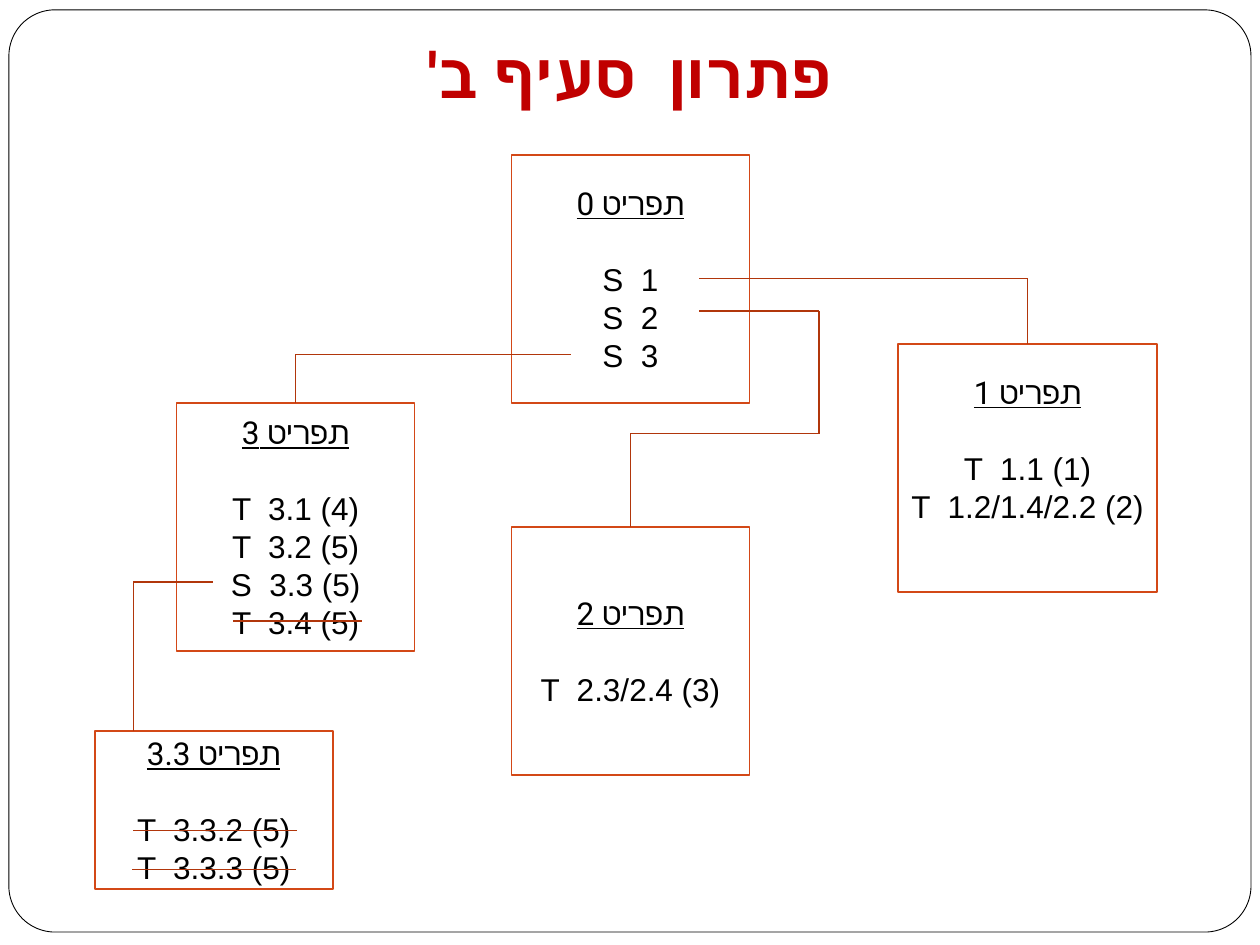
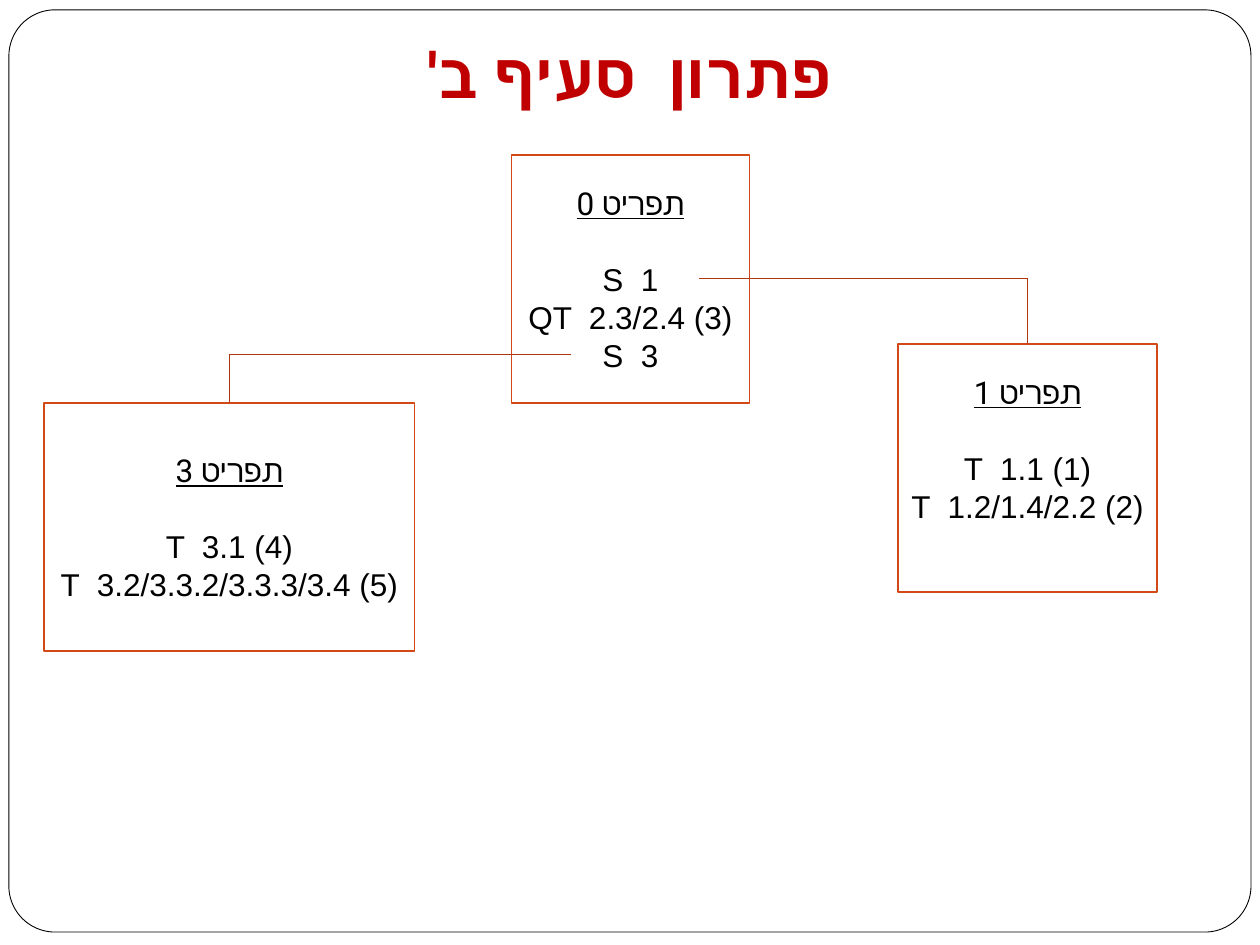
from lxml import etree
from pptx import Presentation
from pptx.dml.color import RGBColor
from pptx.enum.shapes import MSO_CONNECTOR, MSO_SHAPE
from pptx.enum.text import MSO_ANCHOR, PP_ALIGN
from pptx.oxml.ns import qn
from pptx.util import Cm, Pt

RECTANGLE = MSO_SHAPE.RECTANGLE
ROUNDED = MSO_SHAPE.ROUNDED_RECTANGLE
STRAIGHT = MSO_CONNECTOR.STRAIGHT
CENTER = PP_ALIGN.CENTER
MIDDLE = MSO_ANCHOR.MIDDLE
BOTTOM = MSO_ANCHOR.BOTTOM
TOP_SIDE = 0

COLORS = {
    "paper": "FFFFFF",
    "ink": "000000",
    "title": "C00000",
    "box": "D34817",
    "link": "B1360B",
}
LATIN_FONT = "Arial"
HEBREW_FONT = "Roboto"
LINE_PITCH = Pt(21.7)
MENU_WIDTH, MENU_HEIGHT = 4.8, 5.0


def color(name):
    return RGBColor.from_string(COLORS[name])


class MenuDeck:
    """Holds the deck, its style and the slide being drawn."""

    def __init__(self):
        self.deck = Presentation()
        self.deck.slide_width, self.deck.slide_height = Cm(25.4), Cm(19.05)
        self.page = None

    def new_page(self, title):
        self.page = self.deck.slides.add_slide(self.deck.slide_layouts[6])
        frame = self.outlined(ROUNDED, 0.18, 0.2, 25.04, 18.59, "ink", 0.5)
        frame.adjustments[0] = 0.05
        self.title(title)

    def outlined(self, kind, left, top, width, height, line, weight):
        shape = self.page.shapes.add_shape(kind, Cm(left), Cm(top), Cm(width), Cm(height))
        shape.shadow.inherit = False
        shape.fill.solid()
        shape.fill.fore_color.rgb = color("paper")
        shape.line.color.rgb = color(line)
        shape.line.width = Pt(weight)
        return shape

    def style(self, para, size, latin, ink, bold=False, underline=False):
        """Centres a right-to-left paragraph and formats its run."""
        para.alignment = CENTER
        para._p.get_or_add_pPr().set("rtl", "1")
        span = para.runs[0]
        span.font.size = Pt(size)
        span.font.name = latin
        span.font.bold = bold
        span.font.underline = underline
        span.font.color.rgb = color(ink)
        script = etree.SubElement(span.font._element, qn("a:cs"))
        script.set("typeface", HEBREW_FONT)

    def title(self, text):
        box = self.page.shapes.add_textbox(Cm(1.27), Cm(-0.69), Cm(22.86), Cm(3.18))
        frame = box.text_frame
        frame.word_wrap = True
        frame.vertical_anchor = BOTTOM
        frame.margin_bottom = Cm(0.25)
        frame.text = text
        self.style(frame.paragraphs[0], 36, HEBREW_FONT, "title", bold=True)

    def menu(self, left, top, name, items, width=MENU_WIDTH, height=MENU_HEIGHT, lift=0):
        """Draws a menu box; lift is the space kept free below its items."""
        box = self.outlined(RECTANGLE, left, top, width, height, "box", 1)
        frame = box.text_frame
        frame.word_wrap = True
        frame.vertical_anchor = MIDDLE
        frame.margin_left = frame.margin_right = frame.margin_top = 0
        frame.margin_bottom = lift
        frame.text = "\n".join([name, *items])
        for index, para in enumerate(frame.paragraphs):
            self.style(para, 18, LATIN_FONT, "ink", underline=index == 0)
            para.line_spacing = LINE_PITCH
        frame.paragraphs[0].space_after = LINE_PITCH
        return box

    def line(self, start, end):
        connector = self.page.shapes.add_connector(STRAIGHT, *start, *end)
        connector.line.color.rgb = color("link")
        connector.line.width = Pt(0.75)
        etree.SubElement(connector._element.spPr, qn("a:effectLst"))
        return connector

    def route(self, *points, target=None):
        """Links points by straight lines, then drops to the top of target."""
        stops = [(Cm(x), Cm(y)) for x, y in points]
        if target is not None:
            middle = target.left + target.width // 2
            stops += [(middle, stops[-1][1]), (middle, target.top)]
        for start, end in zip(stops, stops[1:]):
            last = self.line(start, end)
        if target is not None:
            last.end_connect(target, TOP_SIDE)

    def shared_menus(self, second_item):
        """Draws menus 0 and 1 with the link between them."""
        self.menu(10.31, 3.12, "תפריט 0", ["S  1", second_item, "S  3"])
        menu_1 = self.menu(18.11, 6.93, "תפריט 1", ["T  1.1 (1)", "T  1.2/1.4/2.2 (2)"],
                           width=5.21, lift=LINE_PITCH)
        self.route((14.1, 5.61), target=menu_1)

    def menu_3(self, left, width, items):
        box = self.menu(left, 8.13, "תפריט 3", items, width=width)
        self.route((11.51, 7.14), target=box)


def main():
    title = "פתרון  סעיף ב'"
    menus = MenuDeck()

    menus.new_page(title)
    menus.shared_menus("S  2")
    menu_2 = menus.menu(10.31, 10.62, "תפריט 2", ["T  2.3/2.4 (3)"])
    menus.route((14.1, 6.27), (16.51, 6.27), (16.51, 8.74), target=menu_2)
    menus.menu_3(3.56, MENU_WIDTH, ["T  3.1 (4)", "T  3.2 (5)", "S  3.3 (5)", "T  3.4 (5)"])
    menus.menu(1.91, 14.73, "תפריט 3.3", ["T  3.3.2 (5)", "T  3.3.3 (5)"], height=3.2)
    menus.route((4.29, 11.73), (2.69, 11.73), (2.69, 14.73))
    for left, right, height in [(4.7, 7.29, 12.52), (2.69, 5.99, 16.74), (2.67, 5.97, 17.53)]:
        menus.route((left, height), (right, height))

    menus.new_page(title)
    menus.shared_menus("QT  2.3/2.4 (3)")
    menus.menu_3(0.89, 7.47, ["T  3.1 (4)", "T  3.2/3.3.2/3.3.3/3.4 (5)"])

    menus.deck.save("out.pptx")


if __name__ == "__main__":
    main()
